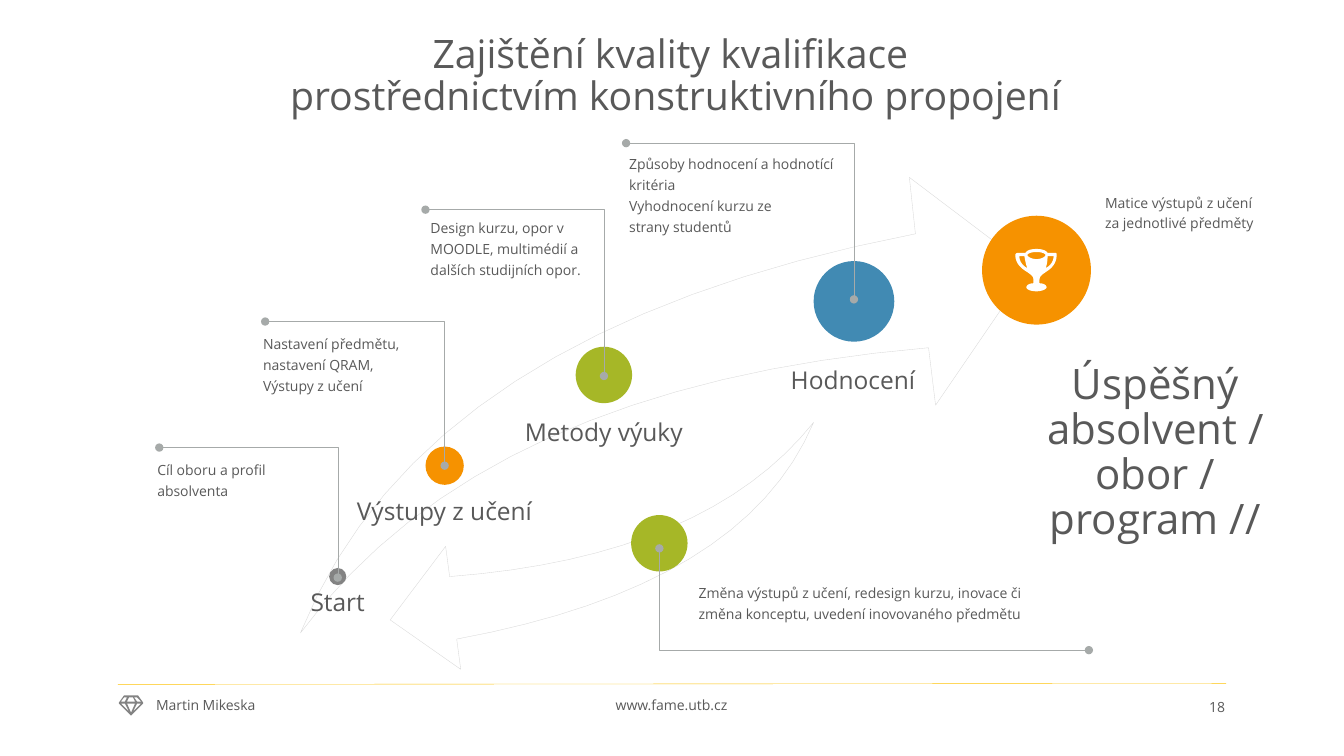
"""Build the slide on assuring qualification quality through constructive alignment."""

from dataclasses import dataclass

from lxml.etree import SubElement
from pptx import Presentation
from pptx.dml.color import RGBColor
from pptx.enum.shapes import MSO_CONNECTOR, MSO_SHAPE
from pptx.enum.text import MSO_ANCHOR, MSO_AUTO_SIZE, PP_ALIGN
from pptx.oxml.ns import qn
from pptx.util import Inches, Pt

WHITE = RGBColor(0xFF, 0xFF, 0xFF)
TEXT_GRAY = RGBColor(0x59, 0x59, 0x59)
ICON_GRAY = RGBColor(0x83, 0x83, 0x83)
ARROW_GRAY = RGBColor(0xD9, 0xD9, 0xD9)
CALLOUT_GRAY = RGBColor(0xA6, 0xAA, 0xA9)
ORANGE = RGBColor(0xF6, 0x92, 0x00)
GREEN = RGBColor(0xA6, 0xB7, 0x27)
BLUE = RGBColor(0x41, 0x8A, 0xB3)
YELLOW = RGBColor(0xFE, 0xC3, 0x06)
HAIRLINE = Pt(0.25)
CURVE_STEPS = 16

Contour = list[tuple[float, ...]]


@dataclass
class Label:
    text: str
    box: tuple[float, float, float, float]
    size: float = 10
    align: PP_ALIGN = PP_ALIGN.LEFT
    anchor: MSO_ANCHOR = MSO_ANCHOR.TOP
    spacing: float | Pt = Pt(15)
    margins: tuple[float, float] = (0, 0)


@dataclass
class Circle:
    center: tuple[float, float]
    diameter: float
    color: RGBColor


@dataclass
class Callout:
    start: tuple[float, float]
    end: tuple[float, float]


CENTER, RIGHT = PP_ALIGN.CENTER, PP_ALIGN.RIGHT
MIDDLE, BOTTOM = MSO_ANCHOR.MIDDLE, MSO_ANCHOR.BOTTOM
INSET = (0.1, 0.05)

TITLE = Label("Zajištění kvality kvalifikace \vprostřednictvím konstruktivního propojení",
              (0.58, 0.39, 12.24, 0.74), 28, CENTER, MIDDLE, 0.9, INSET)
BODIES = [
    Label("Cíl oboru a profil absolventa", (1.56, 4.54, 1.67, 0.76)),
    Label("Start", (2.27, 5.76, 2.16, 0.45), 17.5, CENTER, MIDDLE, 0.9),
]
LABELS = [
    Label("www.fame.utb.cz", (5.58, 6.88, 2.16, 0.26), align=CENTER, spacing=0.9, margins=INSET),
    Label("Martin Mikeska", (1.45, 6.88, 2.16, 0.26), spacing=0.9, margins=INSET),
    Label("18", (10.96, 6.89, 1.29, 0.25), 10, RIGHT, MIDDLE, 1.0, INSET),
    Label("Výstupy z učení", (3.53, 4.88, 1.76, 0.33), 17.5, CENTER, BOTTOM, 1.2),
    Label("Metody výuky", (5.11, 4.1, 1.76, 0.33), 17.5, CENTER, BOTTOM, 1.2),
    Label("Hodnocení", (7.58, 3.58, 1.76, 0.33), 17.5, CENTER, BOTTOM, 1.2),
    Label("Úspěšný absolvent / obor / program //", (10.28, 3.37, 2.36, 2.02), 30, CENTER, BOTTOM, 0.89),
    Label("Nastavení předmětu, nastavení QRAM,\nVýstupy z učení", (2.61, 3.29, 1.66, 0.76)),
    Label("Design kurzu, opor v MOODLE, multimédií a dalších studijních opor.", (4.27, 2.14, 1.66, 0.76)),
    Label("Způsoby hodnocení a hodnotící kritéria\nVyhodnocení kurzu ze\nstrany studentů",
          (6.24, 1.5, 2.14, 1.14)),
    Label("Matice výstupů z učení za jednotlivé předměty", (10.96, 1.9, 1.52, 0.76), spacing=1.2),
    Label("Změna výstupů z učení, redesign kurzu, inovace či změna konceptu, uvedení inovovaného předmětu",
          (6.93, 5.76, 3.26, 0.65)),
]
CIRCLES = [
    Circle((3.35, 5.72), 0.17, ICON_GRAY),
    Circle((4.41, 4.62), 0.38, ORANGE),
    Circle((5.99, 3.72), 0.56, GREEN),
    Circle((8.47, 2.99), 0.8, BLUE),
    Circle((10.28, 2.68), 1.08, ORANGE),
    Circle((6.54, 5.39), 0.56, GREEN),
]
CALLOUTS = [
    Callout((3.35, 5.73), (1.58, 4.44)),
    Callout((4.41, 4.62), (2.63, 3.19)),
    Callout((5.99, 3.73), (4.22, 2.08)),
    Callout((8.47, 2.97), (6.21, 1.42)),
    Callout((6.54, 5.44), (10.8, 6.45)),
]
PROGRESS_ARROW: Contour = [
    (2.98, 6.28), (3.79, 4.27, 5.82, 2.95, 9.08, 2.32), (9.02, 1.76), (10.21, 2.66),
    (9.28, 4.02), (9.21, 3.45), (6.27, 3.7, 4.19, 4.64, 2.98, 6.28)]
FEEDBACK_ARROW: Contour = [
    (8.07, 4.19), (7.61, 5.28, 6.43, 5.99, 4.53, 6.34), (4.57, 6.64), (3.87, 6.15),
    (4.42, 5.42), (4.46, 5.72), (6.17, 5.59, 7.37, 5.07, 8.07, 4.19)]
DIAMOND: list[Contour] = [
    [(1.36, 6.96), (1.33, 6.92), (1.36, 6.92), (1.4, 6.96)],
    [(1.32, 7.06), (1.36, 6.98), (1.4, 6.98)],
    [(1.3, 7.07), (1.26, 6.98), (1.34, 6.98)],
    [(1.2, 6.98), (1.24, 6.98), (1.28, 7.06)],
    [(1.23, 6.92), (1.26, 6.92), (1.24, 6.96), (1.2, 6.96)],
    [(1.32, 6.92), (1.34, 6.96), (1.26, 6.96), (1.28, 6.92)],
    [(1.37, 6.9), (1.23, 6.9), (1.18, 6.97), (1.18, 6.98), (1.3, 7.1), (1.42, 6.98), (1.42, 6.97)],
]
TROPHY: list[Contour] = [
    [(10.11, 2.54), (10.16, 2.54), (10.17, 2.6, 10.18, 2.64, 10.19, 2.66),
     (10.15, 2.64, 10.11, 2.6, 10.11, 2.54)],
    [(10.28, 2.5), (10.34, 2.5, 10.37, 2.52, 10.37, 2.53), (10.37, 2.54, 10.34, 2.57, 10.28, 2.57),
     (10.22, 2.57, 10.19, 2.54, 10.19, 2.53), (10.19, 2.52, 10.22, 2.5, 10.28, 2.5)],
    [(10.37, 2.66), (10.38, 2.64, 10.39, 2.6, 10.39, 2.54), (10.45, 2.54),
     (10.45, 2.6, 10.41, 2.64, 10.37, 2.66)],
    [(10.31, 2.78), (10.31, 2.74, 10.33, 2.73, 10.37, 2.7), (10.42, 2.67, 10.48, 2.62, 10.48, 2.53),
     (10.48, 2.52, 10.48, 2.51, 10.47, 2.51), (10.39, 2.51), (10.38, 2.49, 10.35, 2.47, 10.28, 2.47),
     (10.21, 2.47, 10.18, 2.49, 10.17, 2.51), (10.09, 2.51), (10.08, 2.51, 10.07, 2.52, 10.07, 2.53),
     (10.07, 2.62, 10.14, 2.67, 10.19, 2.7), (10.23, 2.73, 10.25, 2.74, 10.25, 2.78), (10.25, 2.81),
     (10.21, 2.81, 10.18, 2.83, 10.18, 2.85), (10.18, 2.87, 10.22, 2.89, 10.28, 2.89),
     (10.33, 2.89, 10.38, 2.87, 10.38, 2.85), (10.38, 2.83, 10.35, 2.81, 10.31, 2.81)],
]


def write_label(shape, label: Label) -> None:
    shape.left, shape.top, shape.width, shape.height = map(Inches, label.box)
    frame = shape.text_frame
    frame.text = label.text
    horizontal, vertical = map(Inches, label.margins)
    frame_format = {"word_wrap": True, "auto_size": MSO_AUTO_SIZE.NONE, "vertical_anchor": label.anchor,
                    "margin_left": horizontal, "margin_right": horizontal,
                    "margin_top": vertical, "margin_bottom": vertical}
    paragraph_format = {"alignment": label.align, "line_spacing": label.spacing,
                        "space_before": Pt(0), "space_after": Pt(0)}
    font_format = {"name": "Open Sans", "size": Pt(label.size), "bold": False}
    for name, value in frame_format.items():
        setattr(frame, name, value)
    for paragraph in frame.paragraphs:
        properties = paragraph._p.get_or_add_pPr()
        properties.set("marL", "0")
        properties.set("indent", "0")
        SubElement(properties, qn("a:buNone"))
        for name, value in paragraph_format.items():
            setattr(paragraph, name, value)
        for line_break in paragraph._p.findall(qn("a:br")):
            SubElement(line_break, qn("a:rPr"), sz=str(int(label.size * 100)))
        for run in paragraph.runs:
            for name, value in font_format.items():
                setattr(run.font, name, value)
            run.font.color.rgb = TEXT_GRAY


def paint(shape, fill: RGBColor | None, line: RGBColor | None) -> None:
    shape.shadow.inherit = False
    for paint_format, color in ((shape.fill, fill), (shape.line.fill, line)):
        if color is None:
            paint_format.background()
        else:
            paint_format.solid()
            paint_format.fore_color.rgb = color
    if line is not None:
        shape.line.width = HAIRLINE


def flatten(contour: Contour) -> list[tuple[int, int]]:
    points = [contour[0]]
    for step in contour[1:]:
        if len(step) == 2:
            points.append(step)
            continue
        controls = [points[-1], step[:2], step[2:4], step[4:]]
        for index in range(1, CURVE_STEPS + 1):
            t = index / CURVE_STEPS
            weights = ((1 - t) ** 3, 3 * t * (1 - t) ** 2, 3 * t * t * (1 - t), t ** 3)
            points.append(tuple(sum(w * c[axis] for w, c in zip(weights, controls)) for axis in (0, 1)))
    return [(Inches(x), Inches(y)) for x, y in points]


def draw_outline(shapes, contours: list[Contour], fill: RGBColor | None,
                 line: RGBColor | None = None, close: bool = True):
    outlines = [flatten(contour) for contour in contours]
    builder = shapes.build_freeform(*outlines[0][0])
    for index, points in enumerate(outlines):
        if index:
            builder.move_to(*points[0])
        builder.add_line_segments(points[1:], close=close)
    shape = builder.convert_to_shape()
    paint(shape, fill, line)
    return shape


def draw_circle(shapes, circle: Circle) -> None:
    left, top = (Inches(middle - circle.diameter / 2) for middle in circle.center)
    size = Inches(circle.diameter)
    paint(shapes.add_shape(MSO_SHAPE.OVAL, left, top, size, size), circle.color, None)


def draw_callout(shapes, callout: Callout) -> None:
    corner = (callout.start[0], callout.end[1])
    shape = draw_outline(shapes, [[callout.start, corner, callout.end]], None, CALLOUT_GRAY, close=False)
    outline = shape.element.spPr.find(qn("a:ln"))
    for end in ("a:headEnd", "a:tailEnd"):
        SubElement(outline, qn(end), type="oval")


def draw_footer_rule(shapes) -> None:
    rule = shapes.add_connector(MSO_CONNECTOR.STRAIGHT, *map(Inches, (1.17, 6.79, 12.16, 6.78)))
    rule.line.color.rgb = YELLOW
    rule.line.width = HAIRLINE
    SubElement(rule.element.spPr, qn("a:effectLst"))


def main() -> None:
    presentation = Presentation()
    presentation.slide_width, presentation.slide_height = Inches(13.33), Inches(7.5)
    slide = presentation.slides.add_slide(presentation.slide_layouts[3])
    shapes = slide.shapes
    draw_footer_rule(shapes)
    draw_outline(shapes, DIAMOND, ICON_GRAY)
    for arrow in (PROGRESS_ARROW, FEEDBACK_ARROW):
        draw_outline(shapes, [arrow], WHITE, ARROW_GRAY)
    for circle in CIRCLES:
        draw_circle(shapes, circle)
    draw_outline(shapes, TROPHY, WHITE)
    for callout in CALLOUTS:
        draw_callout(shapes, callout)
    for placeholder, label in zip(slide.placeholders, [TITLE, *BODIES]):
        write_label(placeholder, label)
        shapes._spTree.append(placeholder.element)
    for label in LABELS:
        write_label(shapes.add_textbox(*map(Inches, label.box)), label)
    presentation.save("out.pptx")


if __name__ == "__main__":
    main()
